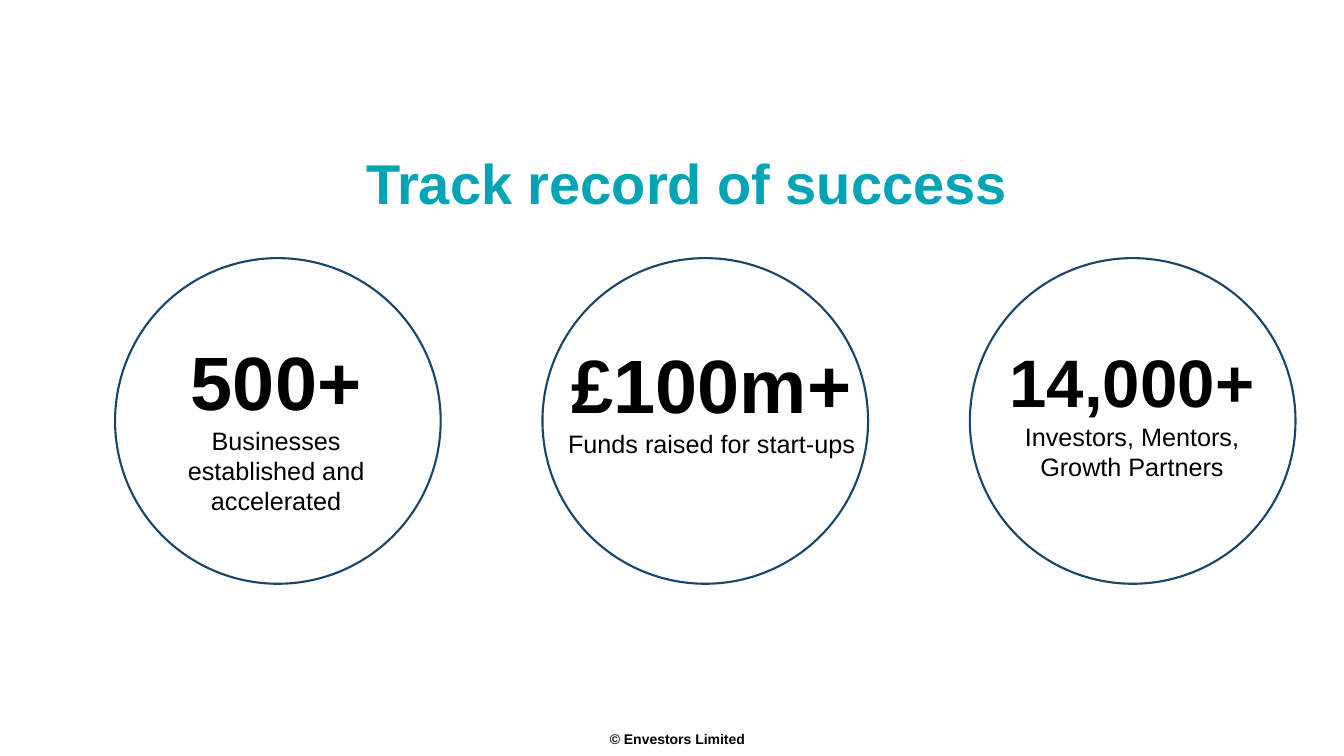
from pptx import Presentation
from pptx.dml.color import RGBColor
from pptx.enum.shapes import MSO_SHAPE
from pptx.enum.text import MSO_AUTO_SIZE, PP_ALIGN
from pptx.util import Pt

theme = {
    "font": "Arial",
    "ink": RGBColor(0x00, 0x00, 0x00),
    "teal": RGBColor(0x00, 0xA4, 0xB4),
    "navy": RGBColor(0x19, 0x45, 0x6B),
    "title": 40,
    "label": 18,
    "foot": 10,
    "big": 54,
    "mid": 48,
}


def add_text(slide, area, lines, inset=3.6):
    box = slide.shapes.add_textbox(*[Pt(n) for n in area])
    frame = box.text_frame
    frame.word_wrap = True
    frame.auto_size = MSO_AUTO_SIZE.SHAPE_TO_FIT_TEXT
    frame.margin_left = frame.margin_right = Pt(inset)
    frame.margin_top = frame.margin_bottom = Pt(inset)
    for i, (words, size, tint, bold) in enumerate(lines):
        para = frame.paragraphs[0] if i == 0 else frame.add_paragraph()
        para.alignment = PP_ALIGN.CENTER
        run = para.add_run()
        run.text = words
        run.font.name = theme["font"]
        run.font.size = Pt(size)
        run.font.bold = bold
        run.font.color.rgb = theme[tint]


deck = Presentation()
deck.slide_width = Pt(960)
deck.slide_height = Pt(540)
slide = deck.slides.add_slide(deck.slide_layouts[6])

add_text(slide, (431.3, 522, 105.1, 12.2),
         [("© Envestors Limited", theme["foot"], "ink", True)], 0)

left, step, top, side = 82.2, 305.3, 184.4, 232.6
for i in range(3):
    ring = slide.shapes.add_shape(
        MSO_SHAPE.OVAL, Pt(left + i * step), Pt(top), Pt(side), Pt(side))
    ring.shadow.inherit = False
    ring.fill.background()
    ring.line.color.rgb = theme["navy"]
    ring.line.width = Pt(1.5)

facts = [
    ((123.8, 235.4, 146.9, 131.8), "500+", "big",
     "Businesses established and accelerated"),
    ((400.3, 237.6, 216, 89.3), "£100m+", "big",
     "Funds raised for start-ups"),
    ((700.6, 239.8, 216, 103.7), "14,000+", "mid",
     "Investors, Mentors, Growth Partners"),
]
for area, count, size, label in facts:
    add_text(slide, area, [(count, theme[size], "ink", True),
                           (label, theme["label"], "ink", False)])

add_text(slide, (211, 102.2, 558.7, 51.1),
         [("Track record of success", theme["title"], "teal", True)])

deck.save("out.pptx")
